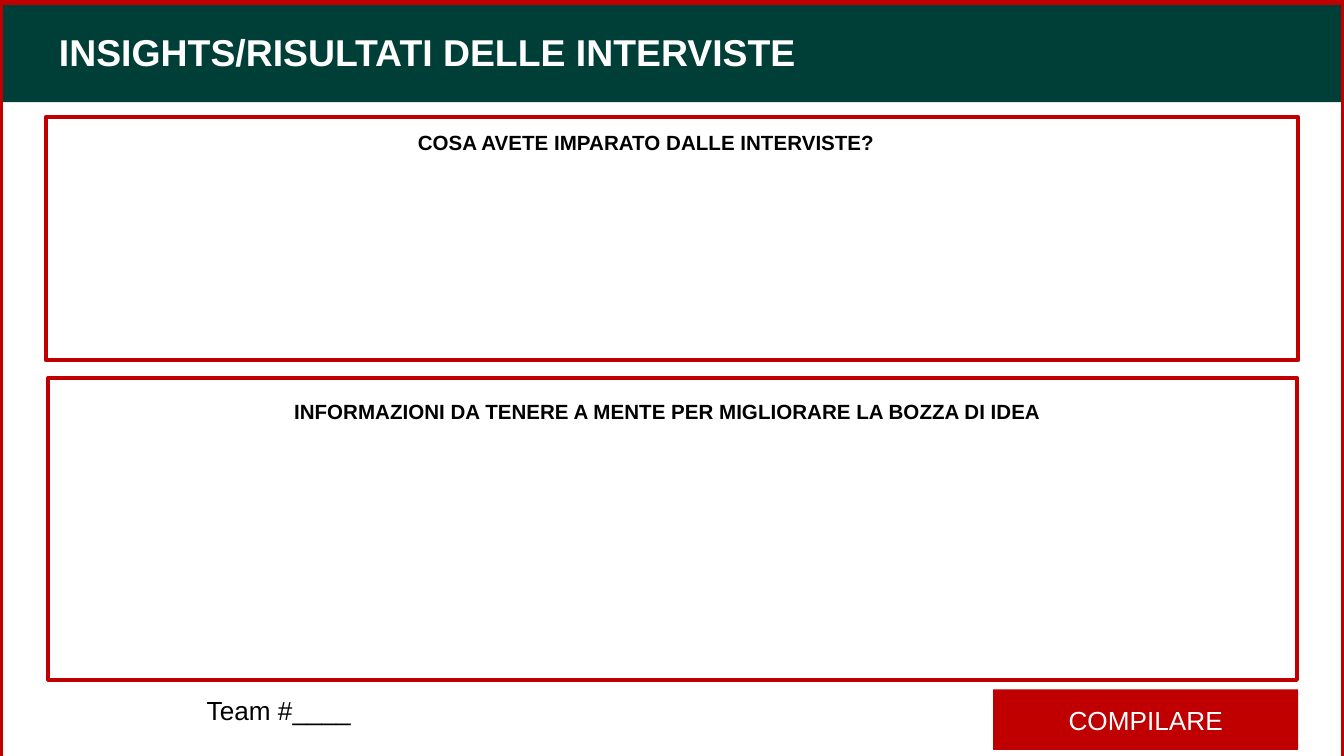
"""Build the interview insights worksheet slide."""
from pptx import Presentation
from pptx.dml.color import RGBColor as Rgb
from pptx.enum.shapes import MSO_SHAPE as Shape
from pptx.enum.text import MSO_ANCHOR as Anchor, PP_ALIGN as Align
from pptx.util import Inches, Pt

GREEN, RED, WHITE, BLACK = "003F37", "C00000", "FFFFFF", "000000"
WIDE = 10
HIGH = WIDE * 9 / 16

BAND = (0, 0, WIDE, 0.76)
TAG = (7.39, 5.13, 2.27, 0.45)
FRAMES = [
    ((0, 0.02, WIDE, HIGH), 3),
    ((0.34, 0.87, 9.32, 1.81), 2),
    ((0.36, 2.81, 9.29, 2.25), 2),
]
TITLE = ("INSIGHTS/RISULTATI DELLE INTERVISTE", (0.34, 0.07, 9.32, 0.63))
HEADS = [
    ("COSA AVETE IMPARATO DALLE INTERVISTE?", (3.01, 0.92, 3.68, 0.29)),
    ("INFORMAZIONI DA TENERE A MENTE PER MIGLIORARE LA BOZZA DI IDEA",
     (2.09, 2.92, 5.83, 0.29)),
]
TEAM = ("Team #____", (1.44, 5.06, 2.27, 0.45))


def color(code):
    return Rgb.from_string(code)


def add_rect(slide, box, fill=None, line=None, width=0):
    rect = slide.shapes.add_shape(Shape.RECTANGLE, *map(Inches, box))
    rect.shadow.inherit = False
    if fill:
        rect.fill.solid()
        rect.fill.fore_color.rgb = color(fill)
    else:
        rect.fill.background()
    if line:
        rect.line.color.rgb = color(line)
        rect.line.width = Pt(width)
    else:
        rect.line.fill.background()
    return rect


def set_text(shape, text, size, ink, bold=False, anchor=Anchor.MIDDLE,
             align=Align.LEFT):
    frame = shape.text_frame
    frame.word_wrap = True
    frame.vertical_anchor = anchor
    frame.margin_left = frame.margin_right = Inches(0.1)
    frame.margin_top = frame.margin_bottom = Inches(0.05)
    frame.text = text
    par = frame.paragraphs[0]
    par.alignment = align
    font = par.runs[0].font
    font.name, font.size, font.bold = "Arial", Pt(size), bold
    font.color.rgb = color(ink)


def add_label(slide, label, *style, **more):
    text, box = label
    shape = slide.shapes.add_textbox(*map(Inches, box))
    set_text(shape, text, *style, **more)


def main():
    deck = Presentation()
    deck.slide_width, deck.slide_height = Inches(WIDE), Inches(HIGH)
    slide = deck.slides.add_slide(deck.slide_layouts[6])
    add_rect(slide, BAND, fill=GREEN)
    add_label(slide, TITLE, 20, WHITE, bold=True)
    for box, width in FRAMES:
        add_rect(slide, box, line=RED, width=width)
    for head in HEADS:
        add_label(slide, head, 11, BLACK, bold=True, anchor=Anchor.TOP)
    tag = add_rect(slide, TAG, fill=RED)
    set_text(tag, "COMPILARE", 14, WHITE, align=Align.CENTER)
    add_label(slide, TEAM, 14, BLACK)
    deck.save("out.pptx")


if __name__ == "__main__":
    main()
